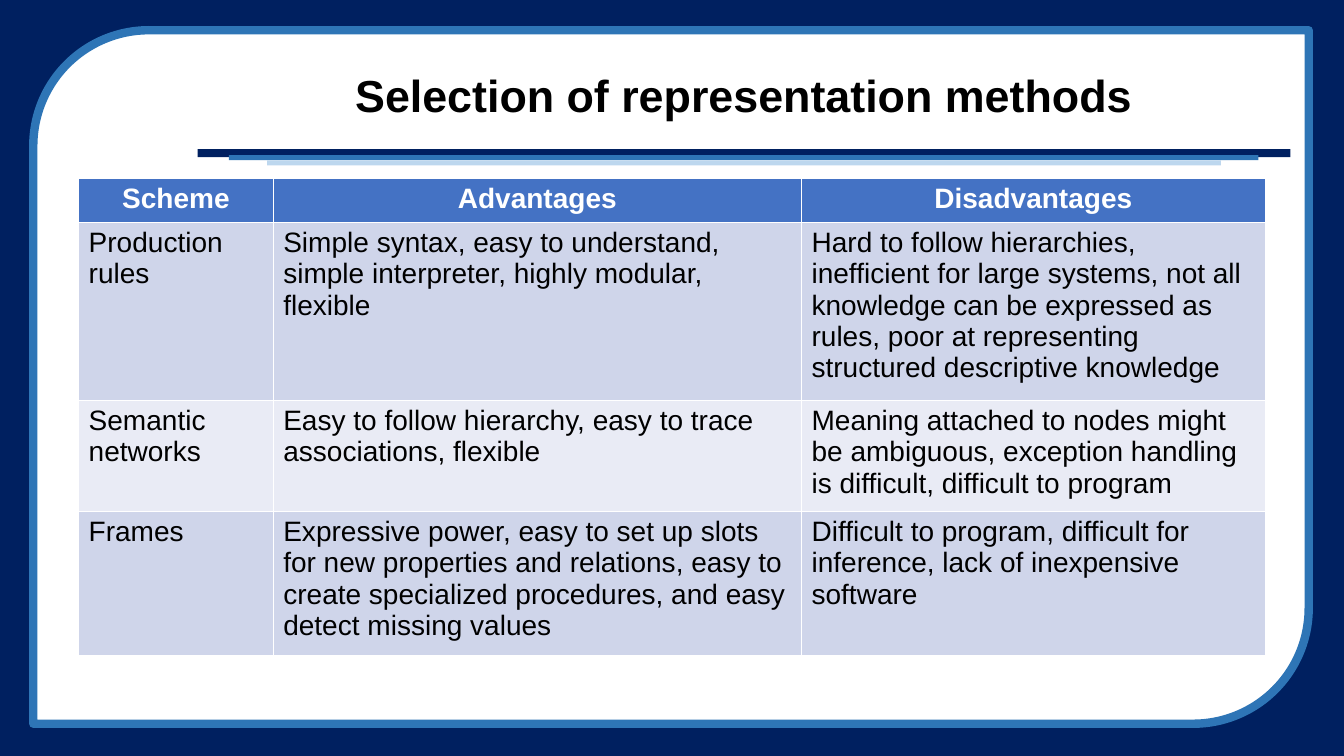
from pptx import Presentation
from pptx.dml.color import RGBColor
from pptx.enum.shapes import MSO_SHAPE
from pptx.enum.text import MSO_ANCHOR, PP_ALIGN
from pptx.util import Inches, Pt

RECT = MSO_SHAPE.RECTANGLE
ROUND = MSO_SHAPE.ROUND_2_DIAG_RECTANGLE
MIDDLE = MSO_ANCHOR.MIDDLE
CENTER, LEFT = PP_ALIGN.CENTER, PP_ALIGN.LEFT
FONT = "Arial"
COLORS = {
    "navy": "002060", "blue": "2E75B6", "pale": "BDD7EE",
    "white": "FFFFFF", "black": "000000",
    "head": "4472C4", "dark": "CFD5EA", "light": "E9EBF5",
}
TITLE = "Selection of representation methods"
WIDTHS = (1.93, 5.24, 4.6)
HEIGHTS = (0.41, 1.65, 1.03, 1.34)
ROWS = (
    ("Scheme", "Advantages", "Disadvantages"),
    ("Production rules",
     "Simple syntax, easy to understand, simple interpreter, highly modular, flexible",
     "Hard to follow hierarchies, inefficient for large systems, not all knowledge "
     "can be expressed as rules, poor at representing structured descriptive knowledge"),
    ("Semantic networks",
     "Easy to follow hierarchy, easy to trace associations, flexible",
     "Meaning attached to nodes might be ambiguous, exception handling is difficult, "
     "difficult to program"),
    ("Frames",
     "Expressive power, easy to set up slots for new properties and relations, "
     "easy to create specialized procedures, and easy detect missing values",
     "Difficult to program, difficult for inference, lack of inexpensive software"),
)


def color(name):
    """Return the named colour."""
    return RGBColor.from_string(COLORS[name])


def add_block(slide, kind, box, fill, line=None):
    """Add a filled shape, outlined only if a line colour is given."""
    shape = slide.shapes.add_shape(kind, *map(Inches, box))
    shape.shadow.inherit = False
    shape.fill.solid()
    shape.fill.fore_color.rgb = color(fill)
    if line:
        shape.line.color.rgb = color(line)
        shape.line.width = Pt(6)
    else:
        shape.line.fill.background()


def add_text(frame, text, size, tint, bold, align):
    """Write one styled run into the first paragraph of a frame."""
    para = frame.paragraphs[0]
    para.alignment = align
    run = para.add_run()
    run.text = text
    run.font.name = FONT
    run.font.size = Pt(size)
    run.font.bold = bold
    run.font.color.rgb = color(tint)
    return para


def add_frame(slide, box):
    """Fill the box with navy and set the rounded panel inside it."""
    left, top, width, height = box
    add_block(slide, RECT, box, "navy")
    panel = (left + 0.33, top + 0.3, width - 0.68, height - 0.62)
    add_block(slide, ROUND, panel, "white", "blue")


def add_title(slide, box):
    """Place the title with three stepped rules below it."""
    left, top, width, height = box
    rules = ((0, 0.99, 10.84, 0.08, "navy"),
             (0.31, 1.05, 10.21, 0.05, "blue"),
             (0.69, 1.1, 9.46, 0.05, "pale"))
    for dx, dy, wide, high, fill in rules:
        add_block(slide, RECT, (left + dx, top + dy, wide, high), fill)
    frame = slide.shapes.add_textbox(*map(Inches, box)).text_frame
    frame.word_wrap = True
    frame.vertical_anchor = MIDDLE
    add_text(frame, TITLE, 32, "black", True, CENTER).line_spacing = 0.9


def add_grid(slide, box):
    """Place the table of schemes in the box."""
    shape = slide.shapes.add_table(len(ROWS), len(WIDTHS), *map(Inches, box))
    table = shape.table
    for column, width in zip(table.columns, WIDTHS):
        column.width = Inches(width)
    for r, texts in enumerate(ROWS):
        table.rows[r].height = Inches(HEIGHTS[r])
        head = r == 0
        fill = "head" if head else "dark" if r % 2 else "light"
        for c, text in enumerate(texts):
            cell = table.cell(r, c)
            cell.fill.solid()
            cell.fill.fore_color.rgb = color(fill)
            add_text(cell.text_frame, text, 20, "white" if head else "black",
                     head, CENTER if head else LEFT)


def main():
    """Build and save the slide."""
    deck = Presentation()
    deck.slide_width = Inches(13.33)
    deck.slide_height = Inches(7.5)
    slide = deck.slides.add_slide(deck.slide_layouts[6])
    add_frame(slide, (0, 0, 13.33, 7.5))
    add_title(slide, (1.96, 0.49, 10.84, 0.97))
    add_grid(slide, (0.78, 1.77, sum(WIDTHS), sum(HEIGHTS)))
    deck.save("out.pptx")


if __name__ == "__main__":
    main()
